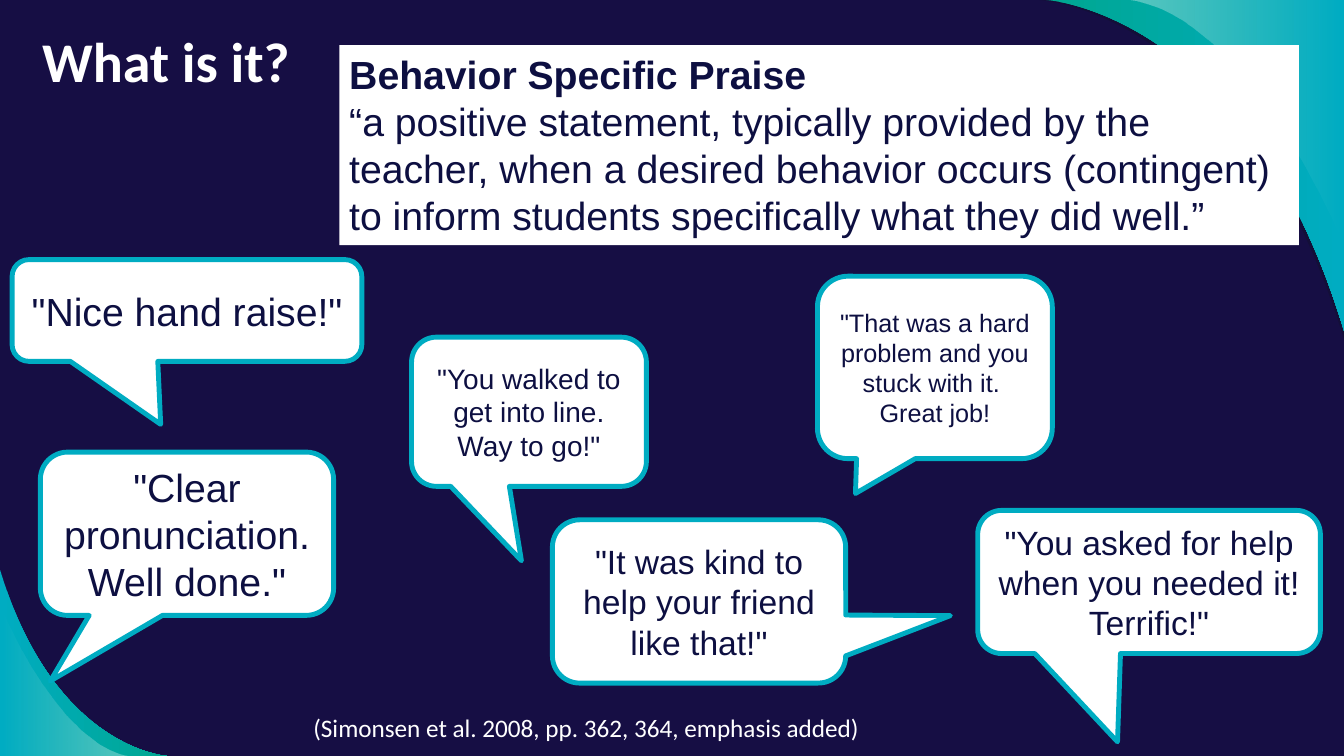
from lxml import etree
from pptx import Presentation
from pptx.dml.color import RGBColor
from pptx.enum.shapes import MSO_SHAPE
from pptx.enum.text import MSO_ANCHOR, MSO_AUTO_SIZE, PP_ALIGN
from pptx.oxml.ns import qn
from pptx.util import Emu, Inches, Pt

# Grid of 160 columns by 90 rows, with square cells
COLUMNS, ROWS = 160, 90
SLIDE_WIDTH, SLIDE_HEIGHT = Inches(13.333), Inches(7.5)

NIGHT = RGBColor(0x16, 0x0E, 0x44)
SHADE = RGBColor(0x12, 0x10, 0x2F)
INK = RGBColor(0x0D, 0x0F, 0x41)
TEAL = RGBColor(0x00, 0xAC, 0xC2)
GREEN = RGBColor(0x00, 0xA7, 0x91)
WHITE = RGBColor(0xFF, 0xFF, 0xFF)

TEAL_TO_GREEN = [(TEAL, 100), (GREEN, 100)]
CLEAR_TO_WHITE = [(WHITE, 0), (WHITE, 36)]

# Curve (start, two control points, end), slide corner, colour stops left to right
TOP, BOTTOM = (COLUMNS, 0), (0, ROWS)
SWOOSHES = [
    ([(160, 40.44), (148.2, 1.32), (123.72, 0), (123.72, 0)], TOP, [(SHADE, 54)]),
    ([(124.56, 0), (124.56, 0), (148.56, 1.32), (160, 39.36)], TOP, TEAL_TO_GREEN[::-1]),
    ([(160, 29.28), (160, 29.28), (149.04, 1.8), (134.16, 0)], TOP, CLEAR_TO_WHITE[::-1]),
    ([(19.92, 90), (19.92, 90), (6.48, 89.28), (0, 67.8)], BOTTOM, TEAL_TO_GREEN),
    ([(0, 72.12), (0, 72.12), (6.72, 88.92), (15.84, 90)], BOTTOM, CLEAR_TO_WHITE),
]

# Grid box, pointer tip, text size, paragraphs
CALLOUTS = [
    ((1.44, 30.9, 41.64, 12.12), (-0.075, 1.119), 28, ['"Nice hand raise!"']),
    ((4.8, 53.82, 34.92, 19.44), (-0.466, 0.902), 28,
     ['"Clear pronunciation. Well done."']),
    ((65.76, 61.88, 34.92, 19.44), (0.857, 0.087), 24,
     ['"It was kind to help your friend like that!"']),
    ((49, 40.14, 27.96, 17.76), (-0.032, 0.999), 20,
     ['"You walked to get into line. Way to go!"']),
    ((116.4, 60.76, 40.8, 17.04), (-0.092, 1.117), 24,
     ['"You asked for help when you needed it! Terrific!"']),
    ((97.32, 32.88, 27.96, 21.72), (-0.338, 0.691), 18,
     ['"That was a hard problem and you stuck with it. ', "Great job!"]),
]


def across(columns):
    return Emu(round(SLIDE_WIDTH * columns / COLUMNS))


def down(rows):
    return Emu(round(SLIDE_HEIGHT * rows / ROWS))


def place(box):
    left, top, width, height = box
    return across(left), down(top), across(width), down(height)


def bend_first_segments(shape):
    """Turn the first three line segments of an outline into one cubic curve."""
    segments = list(shape._element.iter(qn("a:lnTo")))[:3]
    curve = etree.Element(qn("a:cubicBezTo"))
    segments[0].addprevious(curve)
    for segment in segments:
        curve.append(segment[0])
        segment.getparent().remove(segment)


def add_swoosh(slide, controls, corner, stops):
    start, *points = [(across(column), down(row)) for column, row in (*controls, corner)]
    builder = slide.shapes.build_freeform(*start)
    builder.add_line_segments(points, close=True)
    shape = builder.convert_to_shape()
    bend_first_segments(shape)
    shape.shadow.inherit = False
    shape.line.fill.background()
    if len(stops) == 1:
        shape.fill.solid()
        shape.fill.fore_color.rgb = stops[0][0]
    else:
        shape.fill.gradient()
        shape.fill.gradient_angle = 0
        for gradient_stop, (color, _) in zip(shape.fill.gradient_stops, stops):
            gradient_stop.color.rgb = color
    # Opacity of each colour stop, in percent
    color_elements = list(shape._element.spPr.iter(qn("a:srgbClr")))
    for element, (_, opacity) in zip(color_elements, stops):
        if opacity < 100:
            etree.SubElement(element, qn("a:alpha")).set("val", str(opacity * 1000))


def write(shape, paragraphs, size, font="Arial", color=INK, align=PP_ALIGN.LEFT,
          anchor=MSO_ANCHOR.TOP, wrap=True, fit=MSO_AUTO_SIZE.SHAPE_TO_FIT_TEXT):
    """Fill a shape with paragraphs given as (text, bold)."""
    frame = shape.text_frame
    frame.word_wrap = wrap
    frame.auto_size = fit
    frame.vertical_anchor = anchor
    for index, (text, bold) in enumerate(paragraphs):
        paragraph = frame.add_paragraph() if index else frame.paragraphs[0]
        paragraph.alignment = align
        run = paragraph.add_run()
        run.text = text
        run.font.name = font
        run.font.size = Pt(size)
        run.font.bold = bold
        run.font.color.rgb = color


def add_label(slide, box, text, size, bold=False, wrap=True):
    label = slide.shapes.add_textbox(*place(box))
    write(label, [(text, bold)], size, font="Calibri", color=WHITE, wrap=wrap)


def add_white_shape(slide, kind, box):
    shape = slide.shapes.add_shape(kind, *place(box))
    shape.shadow.inherit = False
    shape.fill.solid()
    shape.fill.fore_color.rgb = WHITE
    return shape


def add_callout(slide, box, tip, size, lines):
    callout = add_white_shape(slide, MSO_SHAPE.ROUNDED_RECTANGULAR_CALLOUT, box)
    for index, value in enumerate((*tip, 0.167)):
        callout.adjustments[index] = value
    callout.line.color.rgb = TEAL
    callout.line.width = Pt(3.5)
    write(callout, [(line, False) for line in lines], size, align=PP_ALIGN.CENTER,
          anchor=MSO_ANCHOR.MIDDLE, fit=MSO_AUTO_SIZE.NONE)


def main():
    presentation = Presentation()
    presentation.slide_width, presentation.slide_height = SLIDE_WIDTH, SLIDE_HEIGHT
    slide = presentation.slides.add_slide(presentation.slide_layouts[6])
    slide.background.fill.solid()
    slide.background.fill.fore_color.rgb = NIGHT

    # Corner decoration
    for swoosh in SWOOSHES:
        add_swoosh(slide, *swoosh)

    # Citation and title
    add_label(slide, (36.12, 84.24, 68.16, 4.8),
              "(Simonsen et al. 2008, pp. 362, 364, emphasis added)", 18, wrap=False)
    add_label(slide, (3.84, 2.52, 36.6, 9.24), "What is it?", 40, bold=True)

    # Definition
    definition = add_white_shape(slide, MSO_SHAPE.RECTANGLE, (40.4, 5.36, 114.24, 23.84))
    definition.line.fill.background()
    write(definition, [
        ("Behavior Specific Praise", True),
        ("“a positive statement, typically provided by the teacher, when a desired "
         "behavior occurs (contingent) to inform students specifically what they "
         "did well.”", False),
    ], 28)

    # Examples of praise
    for callout in CALLOUTS:
        add_callout(slide, *callout)

    presentation.save("out.pptx")


if __name__ == "__main__":
    main()
